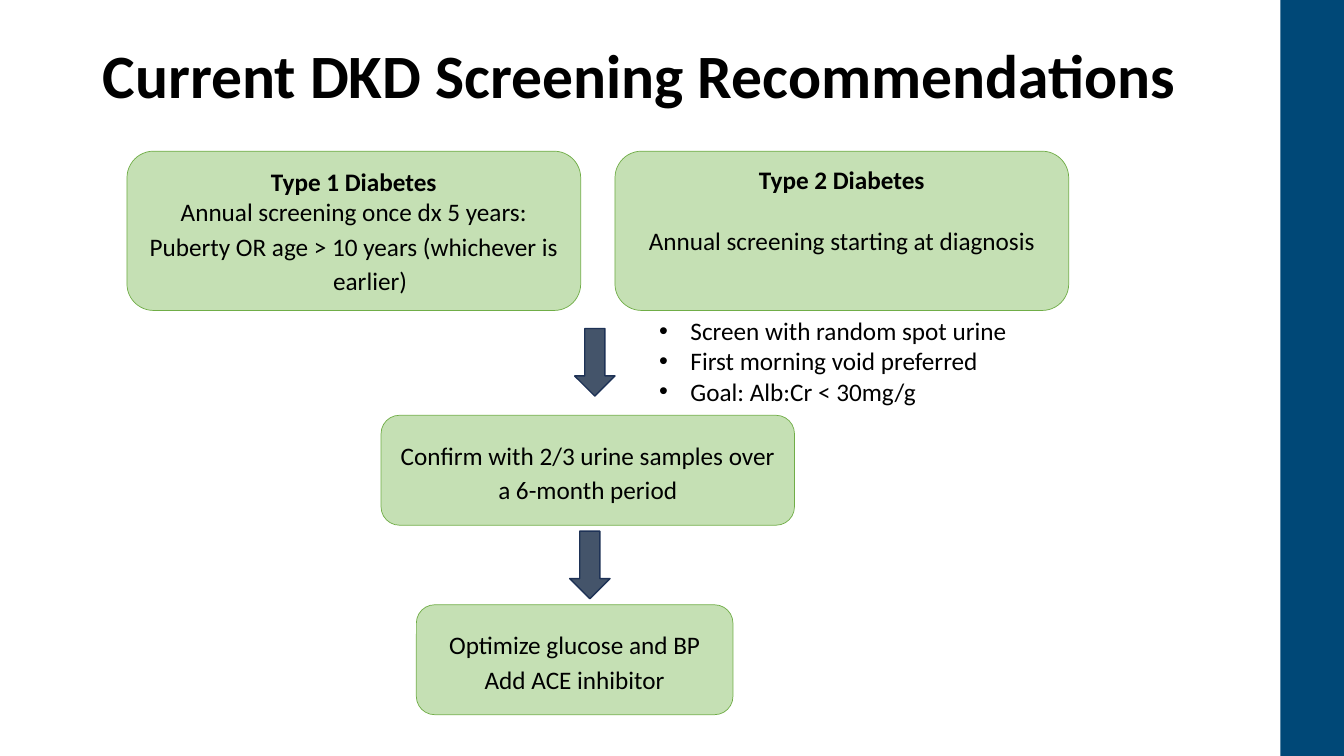
from lxml import etree
from pptx import Presentation
from pptx.dml.color import RGBColor
from pptx.enum.shapes import MSO_SHAPE
from pptx.enum.text import MSO_ANCHOR, MSO_AUTO_SIZE, PP_ALIGN
from pptx.oxml.ns import qn
from pptx.util import Inches, Pt

RECTANGLE = MSO_SHAPE.RECTANGLE
ROUNDED = MSO_SHAPE.ROUNDED_RECTANGLE
DOWN_ARROW = MSO_SHAPE.DOWN_ARROW
TOP, MIDDLE = MSO_ANCHOR.TOP, MSO_ANCHOR.MIDDLE
CENTER, LEFT = PP_ALIGN.CENTER, PP_ALIGN.LEFT
GROW = MSO_AUTO_SIZE.SHAPE_TO_FIT_TEXT

COLORS = {
    "band": "004877",
    "box": "C5E0B4",
    "box_line": "70AD47",
    "arrow": "44546A",
    "arrow_line": "1E3256",
    "text": "000000",
}
FONT = "Calibri"
BODY_SIZE = 18
STEP_FORMAT = {"line_spacing": 1.15}


def color(name):
    return RGBColor.from_string(COLORS[name])


def set_indent(paragraph, hanging, bullet=None):
    """Hang the first line, with a bullet character if one is given."""
    properties = paragraph._p.get_or_add_pPr()
    properties.set("marL", str(Inches(hanging)))
    properties.set("indent", str(-Inches(hanging)))
    if bullet:
        font = etree.SubElement(properties, qn("a:buFont"))
        font.set("typeface", "Arial")
        etree.SubElement(properties, qn("a:buChar")).set("char", bullet)


def write_paragraphs(frame, entries, alignment, size=BODY_SIZE):
    """Each entry is (text, bold, format values)."""
    frame.word_wrap = True
    for index, (text, bold, values) in enumerate(entries):
        paragraph = frame.paragraphs[0] if index == 0 else frame.add_paragraph()
        paragraph.alignment = alignment
        for name, value in values.items():
            if name == "indent":
                set_indent(paragraph, *value)
            else:
                setattr(paragraph, name, value)
        run = paragraph.add_run()
        run.text = text
        font_values = {"name": FONT, "size": Pt(size), "bold": bold}
        for name, value in font_values.items():
            setattr(run.font, name, value)
        run.font.color.rgb = color("text")


def add_block(slide, kind, bounds, fill, line=None, weight=1):
    shape = slide.shapes.add_shape(kind, *map(Inches, bounds))
    shape.shadow.inherit = False
    shape.fill.solid()
    shape.fill.fore_color.rgb = color(fill)
    if line:
        shape.line.color.rgb = color(line)
        shape.line.width = Pt(weight)
    else:
        shape.line.fill.background()
    return shape


def add_box(slide, bounds, entries, anchor=MIDDLE):
    box = add_block(slide, ROUNDED, bounds, "box", "box_line", 0.5)
    box.text_frame.vertical_anchor = anchor
    write_paragraphs(box.text_frame, entries, CENTER)


def add_arrow(slide, left, top):
    add_block(slide, DOWN_ARROW, (left, top, 0.4, 0.67), "arrow", "arrow_line")


def add_text(slide, bounds, entries, size=BODY_SIZE, anchor=TOP, auto_size=None):
    frame = slide.shapes.add_textbox(*map(Inches, bounds)).text_frame
    frame.vertical_anchor = anchor
    write_paragraphs(frame, entries, LEFT, size)
    if auto_size is not None:
        frame.auto_size = auto_size


def main():
    presentation = Presentation()
    presentation.slide_width = Inches(13.33)
    presentation.slide_height = Inches(7.5)
    slide = presentation.slides.add_slide(presentation.slide_layouts[6])

    # Side band and title
    add_block(slide, RECTANGLE, (12.7, 0, 0.63, 7.5), "band")
    title_format = {"line_spacing": 0.9, "space_after": Pt(6)}
    add_text(slide, (0.92, 0.05, 11.5, 1.45),
             [("Current DKD Screening Recommendations", True, title_format)],
             size=44, anchor=MIDDLE)

    # Screening by diabetes type
    add_box(slide, (1.26, 1.5, 4.5, 1.58), [
        ("Type 1 Diabetes", True, {}),
        ("Annual screening once dx 5 years:", False, {}),
        ("Puberty OR age > 10 years (whichever is earlier) ", False,
         {"indent": (0.38,), **STEP_FORMAT}),
    ])
    add_box(slide, (6.1, 1.5, 4.5, 1.58), [
        ("Type 2 Diabetes", True, {}),
        ("Annual screening starting at diagnosis", False, {"space_before": Pt(22)}),
    ], TOP)

    # Follow-up steps
    add_arrow(slide, 5.7, 3.26)
    add_box(slide, (3.78, 4.12, 4.1, 1.09),
            [("Confirm with 2/3 urine samples over a 6-month period", False, STEP_FORMAT)])
    add_arrow(slide, 5.65, 5.27)
    add_box(slide, (4.13, 6, 3.14, 1.09),
            [("Optimize glucose and BP Add ACE inhibitor", False, STEP_FORMAT)])

    # Screening notes
    notes = ("Screen with random spot urine", "First morning void preferred",
             "Goal: Alb:Cr < 30mg/g")
    add_text(slide, (6.44, 3.08, 4.24, 1.01),
             [(note, False, {"indent": (0.31, "•")}) for note in notes],
             auto_size=GROW)

    presentation.save("out.pptx")


if __name__ == "__main__":
    main()
